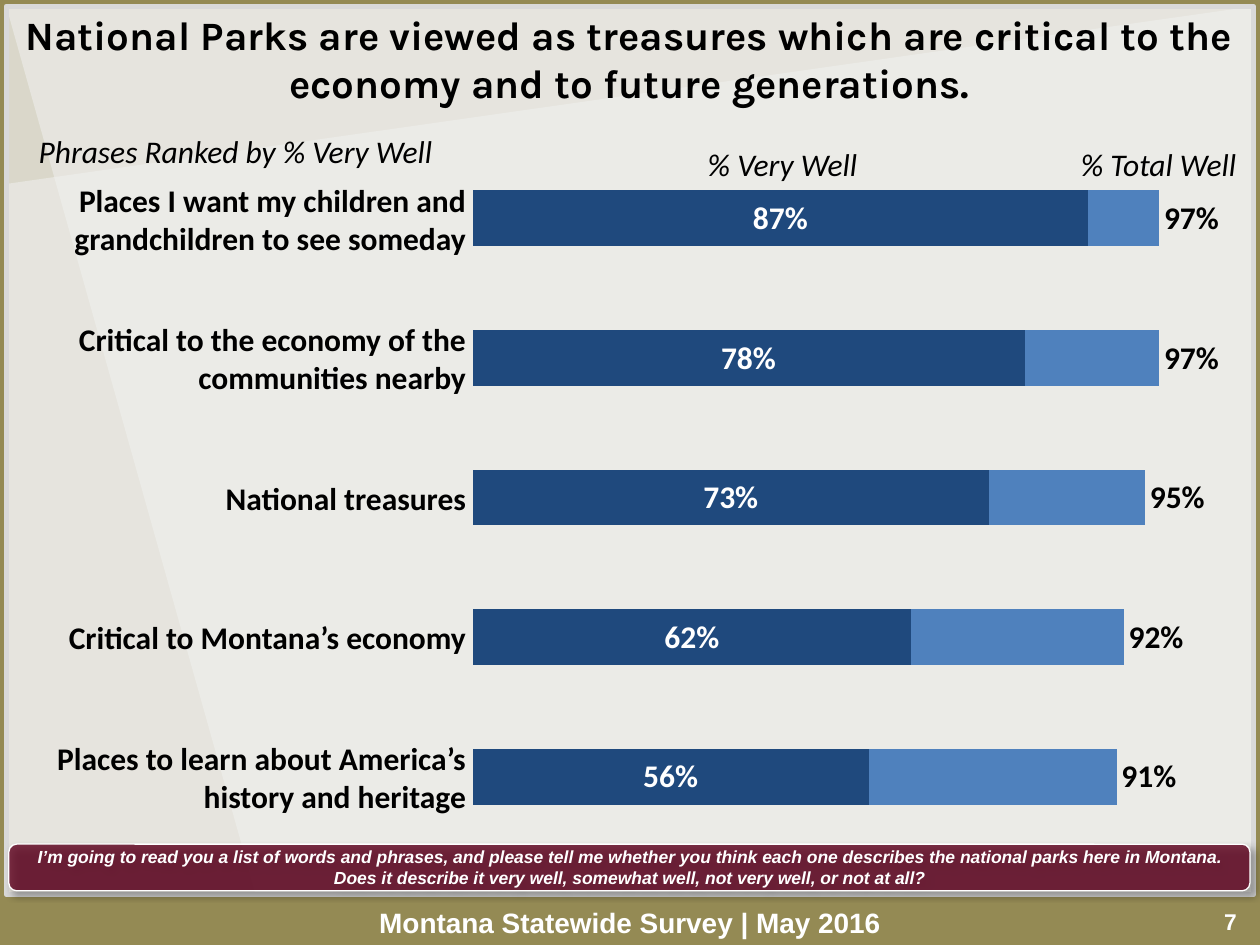
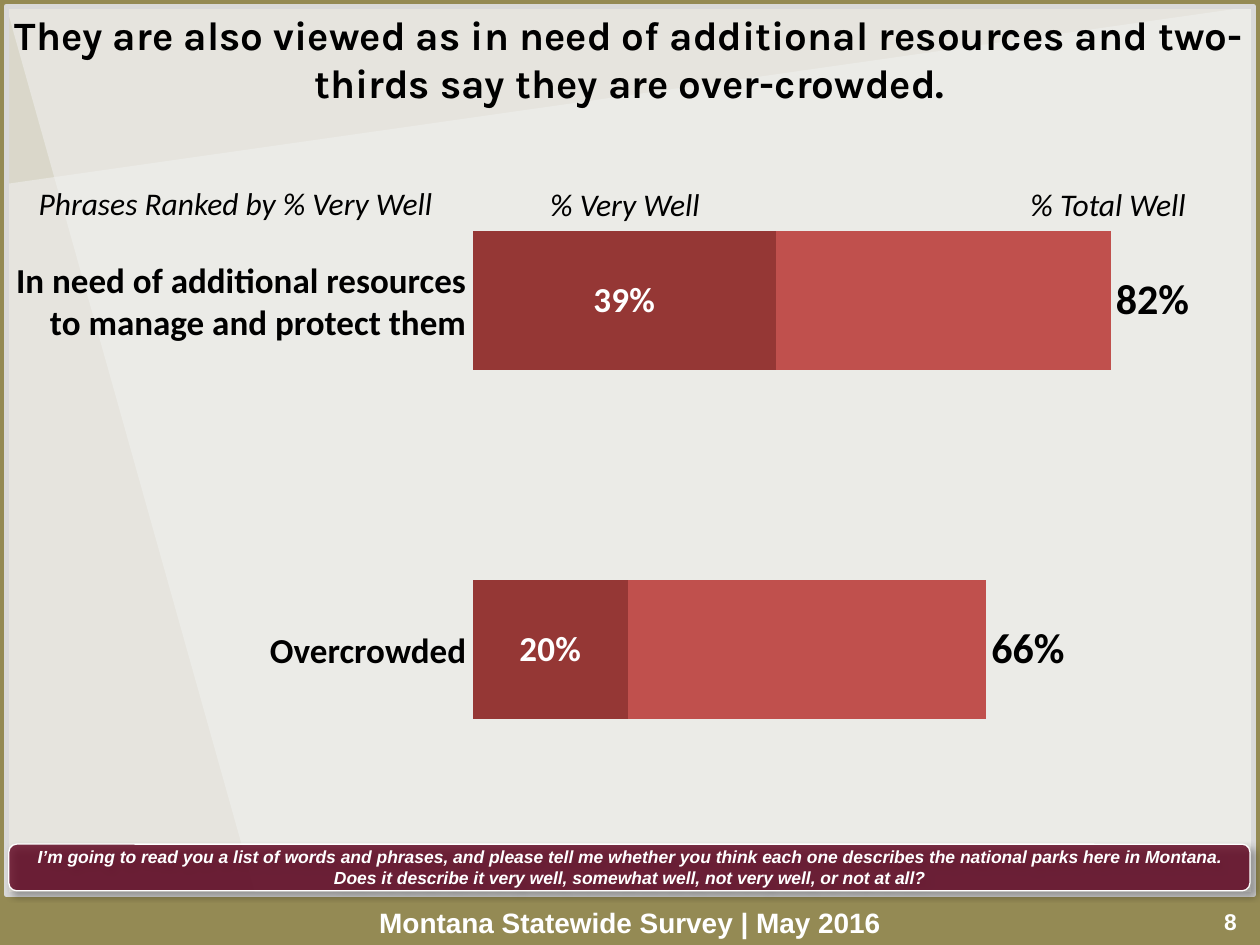
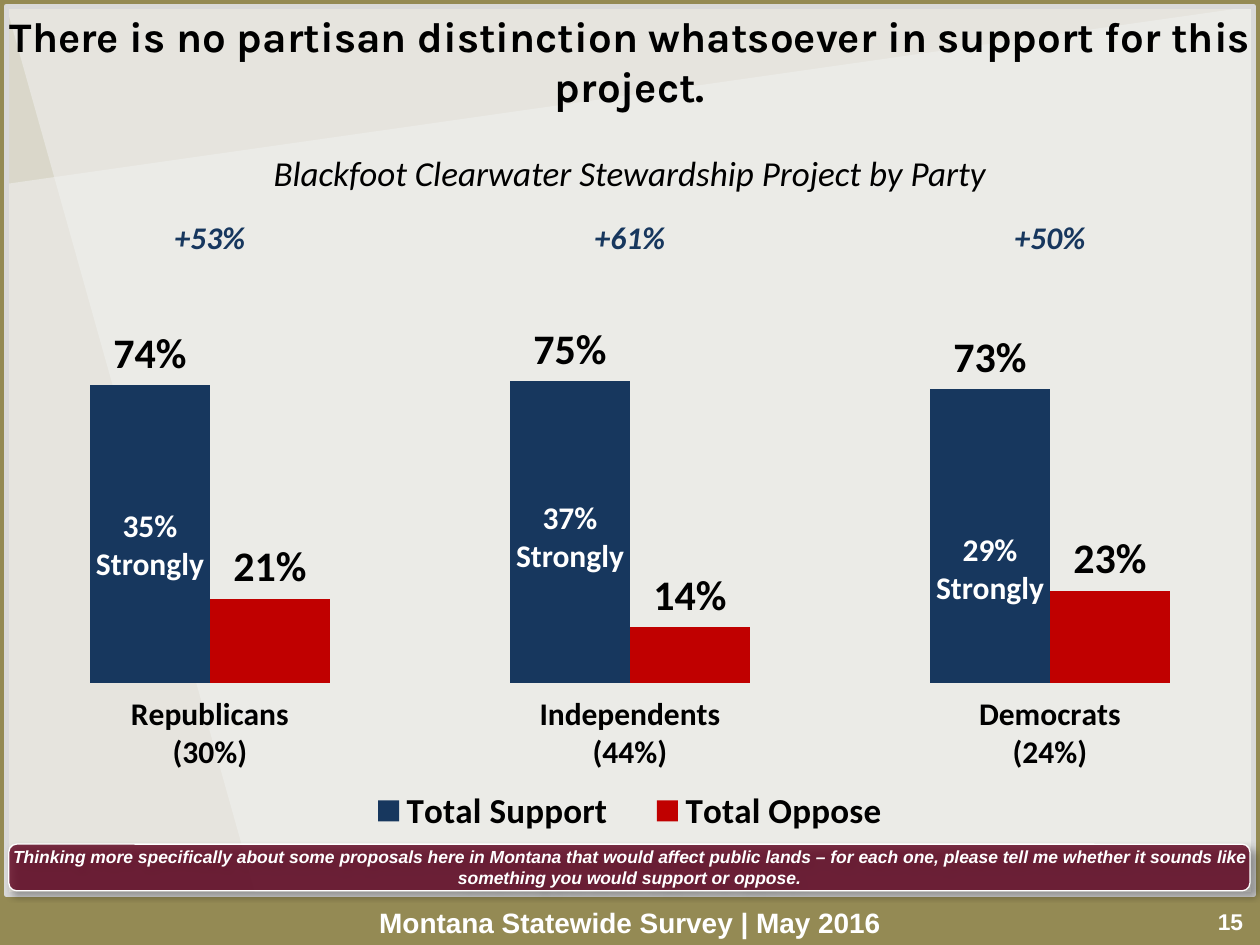
from dataclasses import dataclass
from typing import NamedTuple

from lxml import etree
from pptx import Presentation
from pptx.chart.data import CategoryChartData
from pptx.dml.color import RGBColor
from pptx.enum.chart import (XL_CHART_TYPE, XL_LABEL_POSITION,
                             XL_LEGEND_POSITION, XL_TICK_MARK)
from pptx.enum.shapes import MSO_SHAPE
from pptx.enum.text import MSO_ANCHOR, PP_ALIGN
from pptx.oxml.ns import qn
from pptx.util import Inches, Pt

STACK, COLUMN = XL_CHART_TYPE.BAR_STACKED, XL_CHART_TYPE.COLUMN_CLUSTERED
MID, BASE, OUT = (XL_LABEL_POSITION.CENTER, XL_LABEL_POSITION.INSIDE_BASE,
                  XL_LABEL_POSITION.OUTSIDE_END)
BELOW = XL_LEGEND_POSITION.BOTTOM
TICK_OUT = XL_TICK_MARK.OUTSIDE
SLANT, RECT, ROUND = (MSO_SHAPE.FLOWCHART_MANUAL_INPUT, MSO_SHAPE.RECTANGLE,
                      MSO_SHAPE.ROUNDED_RECTANGLE)
TOP, MIDDLE, BOTTOM = MSO_ANCHOR.TOP, MSO_ANCHOR.MIDDLE, MSO_ANCHOR.BOTTOM
CENTER, RIGHT = PP_ALIGN.CENTER, PP_ALIGN.RIGHT

# The slide is a grid of square cells.
COLS, ROWS = 100, 75
WIDE, HIGH = Inches(10), Inches(7.5)
PERCENT = "0%"


@dataclass(frozen=True)
class Type:
    face: str
    size: float
    color: str
    bold: bool = False
    italic: bool = False


@dataclass(frozen=True)
class Theme:
    olive: str = "948A54"
    pale: str = "F2F2F2"
    edge: str = "D9D9D9"
    wine: str = "5E001D"
    white: str = "FFFFFF"
    black: str = "000000"
    blues: tuple[str, str] = ("1F497D", "4F81BD")
    reds: tuple[str, str] = ("953735", "C0504D")
    navy: str = "17375E"
    red: str = "C00000"
    head: str = "Karla"
    body: str = "Calibri"
    sans: str = "Arial"
    small: float = 18
    large: float = 20
    huge: float = 24


T = Theme()
FOOT = Type(T.sans, 16, T.white, True)
PAGE = Type(T.sans, 13, T.white, True)
NOTE = Type(T.sans, 10, T.white, True, True)
HEAD = Type(T.body, T.small, T.black, italic=True)
SUB = Type(T.body, T.large, T.black, italic=True)
NET = Type(T.body, T.small, T.navy, True, True)
STRONG = Type(T.body, T.small, T.white, True)


class Box(NamedTuple):
    col: float
    row: float
    cols: float
    rows: float

    def emu(self) -> tuple[int, int, int, int]:
        return (round(self.col * WIDE / COLS), round(self.row * HIGH / ROWS),
                round(self.cols * WIDE / COLS), round(self.rows * HIGH / ROWS))


class Pads(NamedTuple):
    side: float = 0.1
    end: float = 0.05


class Label(NamedTuple):
    text: str
    box: Box


class Series(NamedTuple):
    name: str
    vals: tuple[float, ...]
    color: str | None
    spot: XL_LABEL_POSITION | None = None
    kind: Type | None = None


class Rank(NamedTuple):
    """A slide of ranked phrases with one stacked bar each."""
    page: int
    title: str
    row: float
    names: tuple[str, ...]
    deep: float
    name_size: float
    firm: tuple[float, ...]
    total: tuple[float, ...]
    limit: float
    hues: tuple[str, str]
    firm_size: float
    total_size: float
    heads: tuple[Label, ...]


class Party(NamedTuple):
    name: str
    support: float
    oppose: float
    strong: float


PANEL = Box(0.5, 0.5, 99, 70.5)
NO_PAD, FLAT = Pads(0, 0), Pads(0)
ASK = ("I’m going to read you a list of words and phrases, and please tell me "
       "whether you think each one describes the national parks here in Montana.\n"
       "Does it describe it very well, somewhat well, not very well, or not at all?")
ASK_PARTY = ("Thinking more specifically about some proposals here in Montana that "
             "would affect public lands – for each one, please tell me whether it "
             "sounds like something you would support or oppose.")


def heads(row: float, drop: float, very: float, total: float) -> tuple[Label, ...]:
    return (Label("Phrases Ranked by % Very Well", Box(0.5, row, 36.4, 4)),
            Label("% Very Well", Box(37.5, row + drop, very, 4)),
            Label("% Total Well", Box(total, row + drop, 24.3, 4)))


RANKS = (
    Rank(7, "National Parks are viewed as treasures which are critical to the "
         "economy and to future generations.", 11.8,
         ("Places I want my children and grandchildren to see someday",
          "Critical to the economy of the communities nearby",
          "National treasures",
          "Critical to Montana’s economy",
          "Places to learn about America’s history and heritage"),
         4.2, T.small,
         (0.87, 0.78, 0.73, 0.62, 0.56), (0.97, 0.97, 0.95, 0.92, 0.91),
         1.1, T.blues, T.small, T.small, heads(10, 1, 49.2, 79.8)),
    Rank(8, "They are also viewed as in need of additional resources and "
         "two-thirds say they are over-crowded.", 10,
         ("In need of additional resources to manage and protect them",
          "Overcrowded"),
         10.8, T.large,
         (0.39, 0.2), (0.82, 0.66),
         1, T.reds, T.large, T.huge, heads(14.1, 0.1, 24.2, 75.8)),
)
PARTIES = (Party("Republicans\n(30%)", 0.74, 0.21, 0.35),
           Party("Independents\n(44%)", 0.75, 0.14, 0.37),
           Party("Democrats\n(24%)", 0.73, 0.23, 0.29))


def rgb(code: str) -> RGBColor:
    return RGBColor.from_string(code)


def style(font, kind: Type) -> None:
    font.name, font.size = kind.face, Pt(kind.size)
    font.bold, font.italic = kind.bold, kind.italic
    font.color.rgb = rgb(kind.color)


def fill_text(frame, text: str, kind: Type, pads: Pads, anchor, align) -> None:
    """Write text run by run; each newline is a line break."""
    frame.word_wrap, frame.vertical_anchor = True, anchor
    frame.margin_left = frame.margin_right = Inches(pads.side)
    frame.margin_top = frame.margin_bottom = Inches(pads.end)
    para = frame.paragraphs[0]
    para.alignment = align
    for i, line in enumerate(text.split("\n")):
        if i:
            para.add_line_break()
        run = para.add_run()
        run.text = line
        style(run.font, kind)


def write(slide, box: Box, text: str, kind: Type, pads: Pads = Pads(),
          anchor=TOP, align=CENTER) -> None:
    frame = slide.shapes.add_textbox(*box.emu()).text_frame
    fill_text(frame, text, kind, pads, anchor, align)


def shape(slide, form, box: Box, color: str, alpha: int,
          edge: str | None = None, width: float = 0):
    """Add a see-through preset shape; alpha is its opacity in percent."""
    item = slide.shapes.add_shape(form, *box.emu())
    item.shadow.inherit = False
    item.fill.solid()
    item.fill.fore_color.rgb = rgb(color)
    tint = item._element.spPr.find(qn("a:solidFill"))[0]
    etree.SubElement(tint, qn("a:alpha"), val=str(alpha * 1000))
    if edge:
        item.line.color.rgb = rgb(edge)
        item.line.width = Pt(width)
    else:
        item.line.fill.background()
    return item


def shade(item) -> None:
    """Cast a soft shadow down and to the right."""
    effects = item._element.spPr.find(qn("a:effectLst"))
    cast = etree.SubElement(effects, qn("a:outerShdw"), blurRad=str(Pt(4)),
                            dist=str(Pt(3)), dir=str(45 * 60000),
                            algn="tl", rotWithShape="0")
    tint = etree.SubElement(cast, qn("a:srgbClr"), val=T.black)
    etree.SubElement(tint, qn("a:alpha"), val="40000")


def base(deck, page: int, title: str, note: str, size: float = 23,
         rows: float = 7.7):
    """Add a slide with panel, title, question note and footer."""
    slide = deck.slides.add_slide(deck.slide_layouts[6])
    slide.background.fill.solid()
    slide.background.fill.fore_color.rgb = rgb(T.olive)
    shape(slide, SLANT, PANEL, T.pale, 50)
    turn = Box(PANEL.col + (PANEL.cols - PANEL.rows) / 2,
               PANEL.row + (PANEL.rows - PANEL.cols) / 2, PANEL.rows, PANEL.cols)
    shape(slide, SLANT, turn, T.pale, 50).rotation = 270
    shape(slide, RECT, PANEL, T.pale, 75, T.edge, 3)
    write(slide, Box(12.5, 71.3, 75, 3.7), "Montana Statewide Survey | May 2016",
          FOOT, anchor=BOTTOM)
    write(slide, Box(94.9, 71.5, 5.5, 3.2), str(page), PAGE, anchor=MIDDLE)
    write(slide, Box(0.5, 0.8, 99, rows), title,
          Type(T.head, size, T.black, True), NO_PAD)
    band = shape(slide, ROUND, Box(0.7, 67, 98.5, 3.7), T.wine, 80, T.white, 0.75)
    shade(band)
    fill_text(band.text_frame, note, NOTE, NO_PAD, BOTTOM, CENTER)
    return slide


def pin(node, index: int, area: Box, inner: bool = False) -> None:
    """Fix a chart part at shares of the chart's size."""
    for old in node.findall(qn("c:layout")):
        node.remove(old)
    layout = etree.Element(qn("c:layout"))
    node.insert(index, layout)
    spot = etree.SubElement(layout, qn("c:manualLayout"))
    marks = [("layoutTarget", "inner")] if inner else []
    marks += [("xMode", "edge"), ("yMode", "edge")]
    marks += [(tag, str(val)) for tag, val in zip("xywh", area)]
    for tag, val in marks:
        etree.SubElement(spot, qn("c:" + tag), val=val)


def graph(slide, form, box: Box, names: tuple[str, ...], rows: list[Series],
          limit: float, area: Box, overlap: int):
    data = CategoryChartData(number_format=PERCENT)
    data.categories = names
    for row in rows:
        data.add_series(row.name, row.vals)
    chart = slide.shapes.add_chart(form, *box.emu(), data).chart
    style(chart.font, Type(T.body, T.small, T.black, True))
    chart.has_title = chart.has_legend = False
    axis = chart.value_axis
    axis.minimum_scale, axis.maximum_scale = 0, limit
    axis.has_major_gridlines = axis.visible = False
    plot = chart.plots[0]
    plot.gap_width, plot.overlap, plot.vary_by_categories = 150, overlap, False
    for item, row in zip(plot.series, rows):
        item.invert_if_negative = False
        if row.color:
            item.format.fill.solid()
            item.format.fill.fore_color.rgb = rgb(row.color)
        else:
            item.format.fill.background()
        if row.kind:
            tags = item.data_labels
            tags.show_value, tags.position = True, row.spot
            tags.number_format, tags.number_format_is_linked = PERCENT, False
            style(tags.font, row.kind)
    pin(chart._chartSpace.chart.plotArea, 0, area, True)
    return chart


def draw_rank(deck, rank: Rank) -> None:
    slide = base(deck, rank.page, rank.title, ASK)
    box = Box(37.5, rank.row, 61.8, 55.4)
    rest = tuple(round(t - f, 2) for t, f in zip(rank.total, rank.firm))
    rows = [Series("Very well", rank.firm, rank.hues[0], MID,
                   Type(T.body, rank.firm_size, T.white, True)),
            Series("Somewhat well", rest, rank.hues[1]),
            Series("Total well", rank.total, None, BASE,
                   Type(T.body, rank.total_size, T.black, True))]
    chart = graph(slide, STACK, box, rank.names, rows, rank.limit,
                  Box(0, 0, 1, 1), 100)
    chart.category_axis.reverse_order = True
    chart.category_axis.visible = False
    step = box.rows / len(rank.names)
    kind = Type(T.body, rank.name_size, T.black, True)
    for i, name in enumerate(rank.names):
        row = box.row + (i + 0.5) * step - rank.deep / 2
        write(slide, Box(1.1, row, 35.9, rank.deep), name, kind, FLAT,
              MIDDLE, RIGHT)
    for head in rank.heads:
        write(slide, head.box, head.text, HEAD)


def draw_party(deck) -> None:
    slide = base(deck, 15, "There is no partisan distinction whatsoever in "
                 "support for this project.", ASK_PARTY, 24, 8.1)
    box, area = Box(0, 5.5, 100, 63.3), Box(0, 0.265, 1, 0.505)
    kind = Type(T.body, T.huge, T.black, True)
    names, support, oppose, _ = zip(*PARTIES)
    rows = [Series("Total Support", support, T.navy, OUT, kind),
            Series("Total Oppose", oppose, T.red, OUT, kind)]
    chart = graph(slide, COLUMN, box, names, rows, 1, area, 0)
    axis = chart.category_axis
    axis.major_tick_mark = TICK_OUT
    axis.format.line.fill.background()
    chart.has_legend = True
    legend = chart.legend
    legend.position, legend.include_in_layout = BELOW, False
    style(legend.font, Type(T.body, T.large, T.black, True))
    pin(legend._element, 1, Box(0.27, 0.89, 0.46, 0.08))

    write(slide, Box(10, 11.5, 80, 4.4),
          "Blackfoot Clearwater Stewardship Project by Party", SUB)
    step = box.cols / len(PARTIES)
    bar = step / 3.5
    floor = box.row + box.rows * (area.row + area.rows)
    for i, party in enumerate(PARTIES):
        mid = (i + 0.5) * step
        net = round((party.support - party.oppose) * 100)
        write(slide, Box(mid - 4.15, 16.8, 8.3, 4), f"+{net}%", NET)
        level = floor - party.strong * box.rows * area.rows
        write(slide, Box(mid - bar / 2 - 4.75, level - 3.4, 9.5, 7.1),
              f"{party.strong:.0%}\nStrongly", STRONG, FLAT)


def main() -> None:
    deck = Presentation()
    deck.slide_width, deck.slide_height = WIDE, HIGH
    for rank in RANKS:
        draw_rank(deck, rank)
    draw_party(deck)
    deck.save("out.pptx")


if __name__ == "__main__":
    main()
